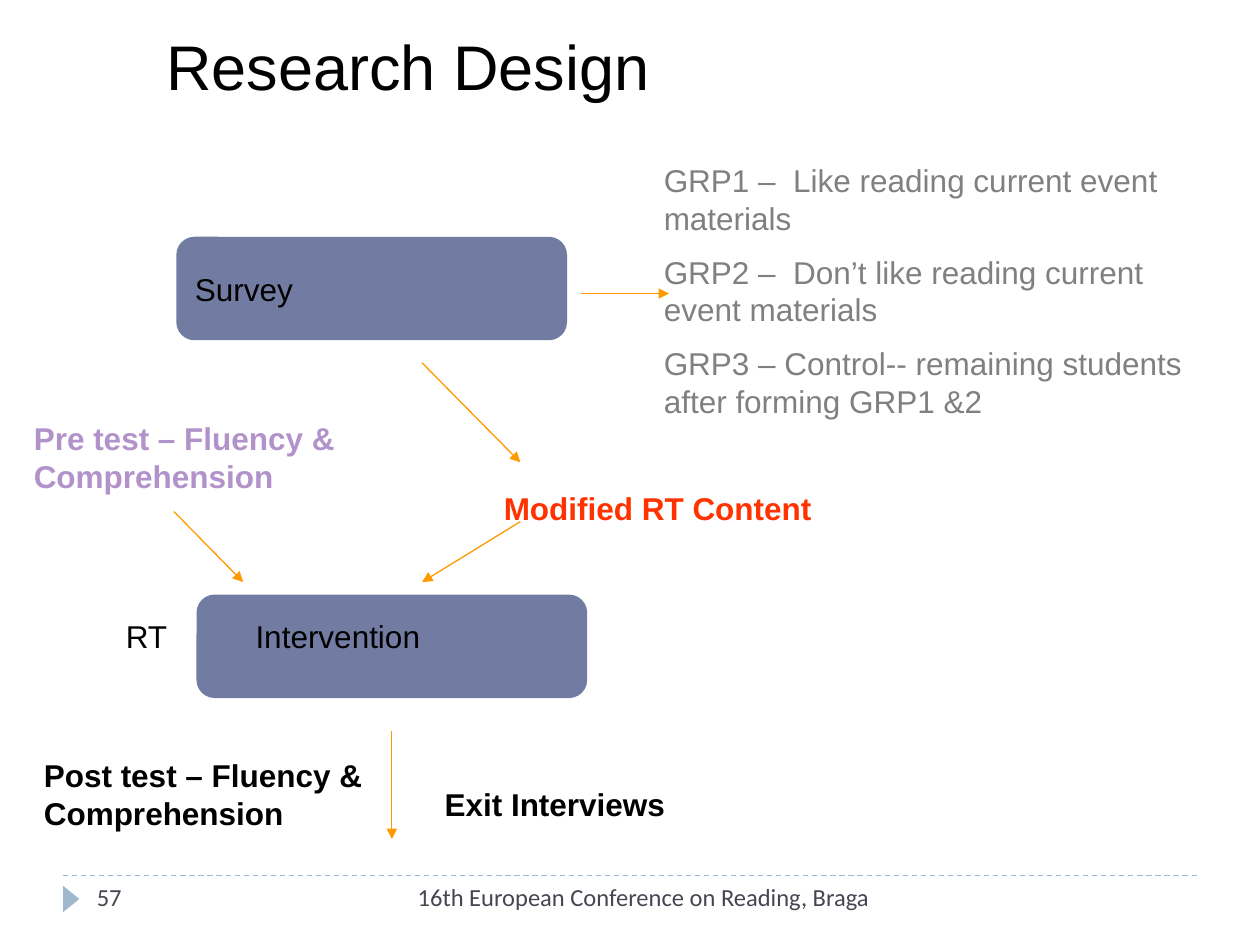
from lxml import etree
from pptx import Presentation
from pptx.dml.color import RGBColor
from pptx.enum.dml import MSO_LINE
from pptx.enum.shapes import MSO_CONNECTOR, MSO_SHAPE
from pptx.enum.text import MSO_ANCHOR, PP_ALIGN
from pptx.oxml.ns import qn
from pptx.util import Inches, Pt

STRAIGHT = MSO_CONNECTOR.STRAIGHT
ROUNDED, TRIANGLE = MSO_SHAPE.ROUNDED_RECTANGLE, MSO_SHAPE.ISOSCELES_TRIANGLE
TOP, MIDDLE, BOTTOM = MSO_ANCHOR.TOP, MSO_ANCHOR.MIDDLE, MSO_ANCHOR.BOTTOM
LEFT, RIGHT = PP_ALIGN.LEFT, PP_ALIGN.RIGHT
DASH = MSO_LINE.DASH

COLORS = {name: RGBColor.from_string(value) for name, value in {
    "black": "000000", "grey": "808080", "box": "727CA3", "arrow": "FF9900",
    "pretest": "B292CA", "content": "FF3300", "rule": "9FB8CD", "footer": "464653",
}.items()}

prs = Presentation()
prs.slide_width, prs.slide_height = Inches(10), Inches(7.5)
s = prs.slides.add_slide(prs.slide_layouts[6])

# The slide is a grid of 100 columns by 75 rows of square cells.
CELL = prs.slide_width // 100


def write(sp, lines, color="black", size=18, bold=False, font="Arial",
          anchor=TOP, align=LEFT):
    tf = sp.text_frame
    tf.word_wrap = True
    tf.vertical_anchor = anchor
    for i, line in enumerate(lines):
        p = tf.add_paragraph() if i else tf.paragraphs[0]
        p.text = line
        p.alignment = align
        p.space_before = Pt(size / 2 if i else 0)
        p.font.name, p.font.size, p.font.bold = font, Pt(size), bold
        p.font.color.rgb = COLORS[color]


def add_line(x1, y1, x2, y2, color):
    """Draw a thin shadowless line between two grid points."""
    cx = s.shapes.add_connector(STRAIGHT, *(round(v * CELL) for v in (x1, y1, x2, y2)))
    cx.line.color.rgb = COLORS[color]
    cx.line.width = Pt(0.75)
    etree.SubElement(cx._element.spPr, qn("a:effectLst"))
    return cx


# Footer rule and marker
add_line(5, 69.5, 95, 69.5, "rule").line.dash_style = DASH
marker = s.shapes.add_shape(TRIANGLE, *(round(v * CELL) for v in (4.6, 70.7, 2.1, 1.3)))
marker.rotation = 90
marker.shadow.inherit = False
marker.fill.solid()
marker.fill.fore_color.rgb = COLORS["rule"]
marker.line.fill.background()

# Stage boxes
for left, top, label in [(14.1, 18.9, "Survey"), (15.7, 47.3, None)]:
    sp = s.shapes.add_shape(ROUNDED, *(round(v * CELL) for v in (left, top, 30.8, 8)))
    sp.shadow.inherit = False
    sp.fill.solid()
    sp.fill.fore_color.rgb = sp.line.color.rgb = COLORS["box"]
    sp.line.width = Pt(1.5)
    if label:
        write(sp, [label], anchor=MIDDLE)

# Texts: left, top, width, height, paragraphs, formatting
groups = [
    "GRP1 –  Like reading current event materials",
    "GRP2 –  Don’t like reading current event materials",
    "GRP3 – Control-- remaining students after forming GRP1 &2",
]
footer = {"color": "footer", "size": 14, "font": "Calibri"}
texts = [
    (12.2, 2.8, 81.1, 5.9, ["Research Design"], {"size": 36, "anchor": BOTTOM}),
    (51.7, 12.3, 43.3, 22.2, groups, {"color": "grey"}),
    (1.7, 32.8, 32.6, 7, ["Pre test – Fluency & Comprehension"],
     {"color": "pretest", "bold": True}),
    (2.5, 59.5, 33.3, 7, ["Post test – Fluency & Comprehension"], {"bold": True}),
    (34.3, 61.8, 37.8, 4, ["Exit Interviews"], {"bold": True}),
    (39, 38.3, 37.8, 4, ["Modified RT Content"], {"color": "content", "bold": True}),
    (9, 48.5, 24.4, 5, ["RT"], {}),
    (19.3, 48.5, 28.4, 5, ["Intervention"], {}),
    (6.7, 69.5, 21.7, 4, ["57"], footer),
    (31.7, 69.5, 38.3, 4, ["16th European Conference on Reading, Braga"],
     {**footer, "align": RIGHT}),
]
for *box, lines, style in texts:
    write(s.shapes.add_textbox(*(round(v * CELL) for v in box)), lines, **style)

# Flow arrows
arrows = [
    (33.5, 28.8, 41.3, 36.7),  # survey to modified content
    (31.1, 58, 31.1, 66.6),    # intervention to post test
    (41.3, 41.4, 33.5, 46.2),  # modified content to intervention
    (13.8, 40.6, 19.3, 46.2),  # pre test to intervention
    (46.1, 23.3, 53.1, 23.3),  # survey to groups
]
for ends in arrows:
    cx = add_line(*ends, "arrow")
    etree.SubElement(cx._element.spPr.find(qn("a:ln")), qn("a:tailEnd"), type="triangle")

prs.save("out.pptx")
